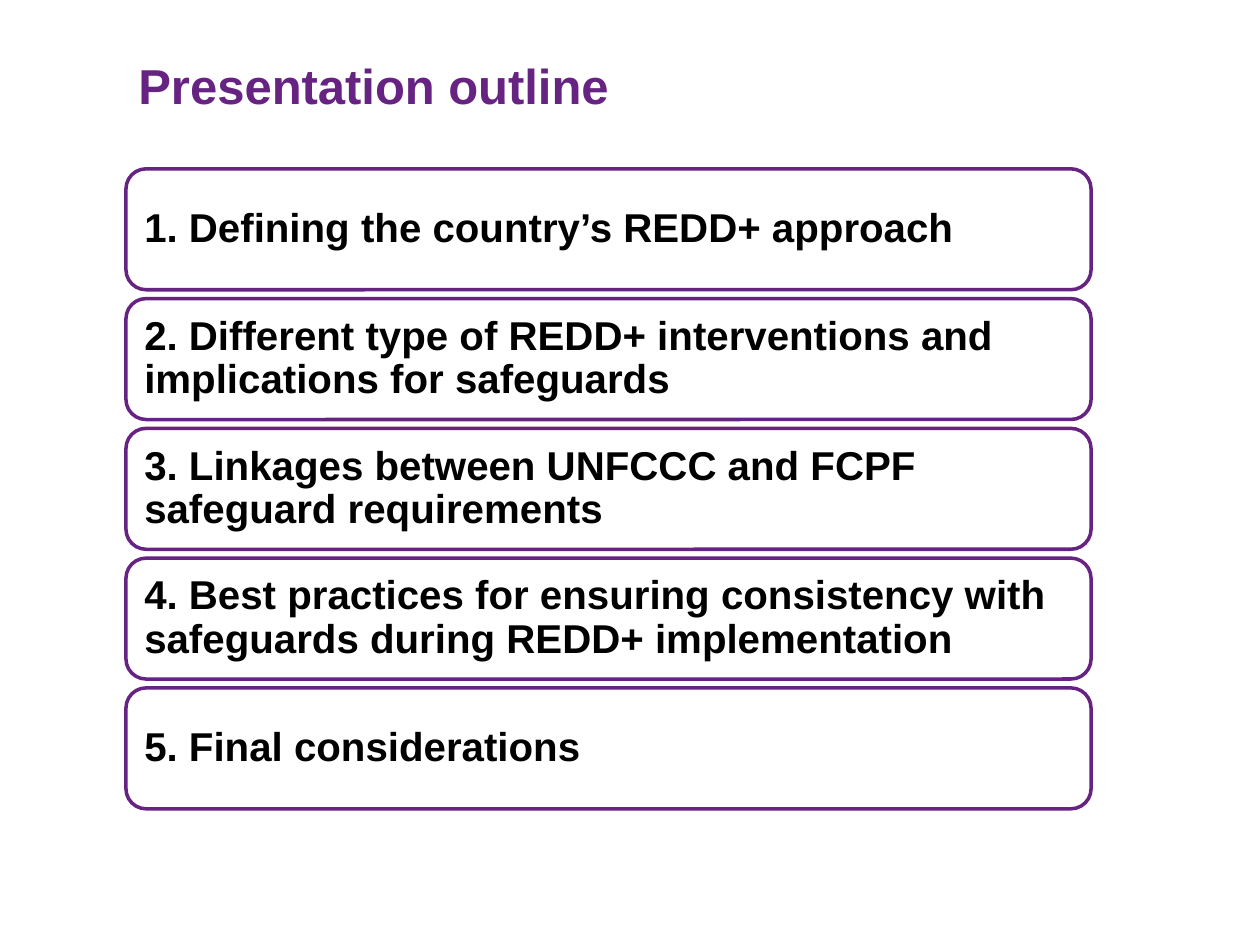
from pptx import Presentation
from pptx.dml.color import RGBColor
from pptx.enum.shapes import MSO_SHAPE
from pptx.enum.text import MSO_ANCHOR, MSO_AUTO_SIZE, PP_ALIGN
from pptx.util import Inches, Pt

ROUND = MSO_SHAPE.ROUNDED_RECTANGLE
MIDDLE = MSO_ANCHOR.MIDDLE
GROW = MSO_AUTO_SIZE.SHAPE_TO_FIT_TEXT
LEFT = PP_ALIGN.LEFT

TITLE = "Presentation outline"
TOPICS = [
    "Defining the country’s REDD+ approach",
    "Different type of REDD+ interventions and implications for safeguards",
    "Linkages between UNFCCC and FCPF safeguard requirements",
    "Best practices for ensuring consistency with safeguards during REDD+ implementation",
    "Final considerations",
]

THEME = {
    "purple": RGBColor.from_string("662382"),
    "white": RGBColor.from_string("FFFFFF"),
    "black": RGBColor.from_string("000000"),
    "font": "Arial",
    "title": Pt(28),
    "topic": Pt(23),
    "line": Pt(2),
}

EDGE, TOP, WIDTH, HEIGHT, STEP = 1, 1.34, 7.66, 0.96, 1.03
PAD = Inches(0.1)
TITLE_FRAME = {"word_wrap": True, "auto_size": GROW}
TOPIC_FRAME = {
    "word_wrap": True,
    "vertical_anchor": MIDDLE,
    "margin_left": PAD,
    "margin_right": PAD,
    "margin_top": PAD,
    "margin_bottom": PAD,
}


def apply(item, values):
    for name, value in values.items():
        setattr(item, name, value)


def write(shape, text, size, color, frame, spacing):
    apply(shape.text_frame, frame)
    para = shape.text_frame.paragraphs[0]
    apply(para, {"alignment": LEFT, "line_spacing": spacing})
    run = para.add_run()
    run.text = text
    apply(run.font, {"name": THEME["font"], "size": THEME[size], "bold": True})
    run.font.color.rgb = THEME[color]


def add_topic(slide, index, text):
    top = TOP + index * STEP
    box = slide.shapes.add_shape(
        ROUND, Inches(EDGE), Inches(top), Inches(WIDTH), Inches(HEIGHT)
    )
    box.shadow.inherit = False
    box.fill.solid()
    box.fill.fore_color.rgb = THEME["white"]
    box.line.color.rgb = THEME["purple"]
    box.line.width = THEME["line"]
    write(box, f"{index + 1}. {text}", "topic", "black", TOPIC_FRAME, 0.9)


def main():
    deck = Presentation()
    apply(deck, {"slide_width": Inches(10), "slide_height": Inches(7.5)})
    slide = deck.slides.add_slide(deck.slide_layouts[6])
    title = slide.shapes.add_textbox(
        Inches(EDGE), Inches(0.39), Inches(5.18), Inches(0.57)
    )
    write(title, TITLE, "title", "purple", TITLE_FRAME, 1.0)
    for index, text in enumerate(TOPICS):
        add_topic(slide, index, text)
    deck.save("out.pptx")


if __name__ == "__main__":
    main()
